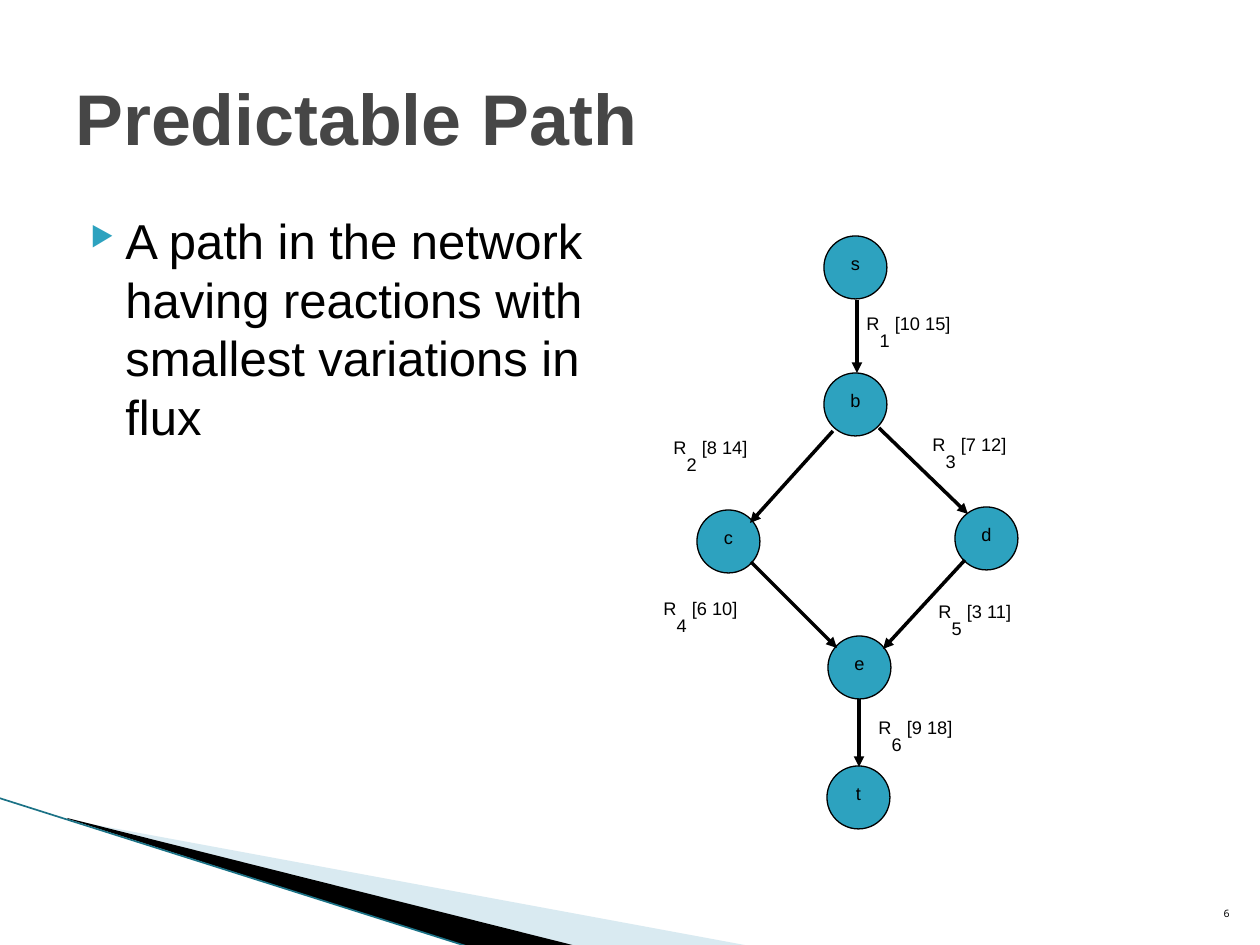
import pptx
import pptx.util
import pptx.dml.color
import pptx.enum.shapes
import pptx.enum.text
import pptx.oxml.ns
from lxml import etree

# Content, lengths in px
TITLE = "Predictable Path"
POINT = "A path in the network having reactions with smallest variations in flux"
NUMBER = "6"
NODE_SIZE = 63
NODES = [("s", 824, 236), ("b", 824, 373), ("c", 697, 510),
         ("d", 955, 507), ("e", 828, 636), ("t", 827, 766)]
# reaction index, flux range, label left and top, arrow start and end
REACTIONS = [
    ("1", "[10 15]", (854, 302), (857, 300), (857, 373)),
    ("2", "[8 14]", (661, 426), (833, 431), (750, 523)),
    ("3", "[7 12]", (920, 423), (879, 428), (968, 514)),
    ("4", "[6 10]", (651, 587), (751, 562), (837, 648)),
    ("5", "[3 11]", (926, 590), (965, 560), (883, 649)),
    ("6", "[9 18]", (866, 706), (859, 699), (859, 767)),
]
# corner wedges: colour name, opacity in percent, outline
WEDGES = [
    ("pale", 40, [(69, 820), (750, 946), (575, 946), (69, 819)]),
    ("black", 100, [(67, 818), (576, 946), (469, 947), (68, 819)]),
]
THEME = {
    "font": "Arial", "number_font": "Noto Sans Mono",
    "title": 41, "body": 28, "label": 18, "number": 10,
    "black": "000000", "grey": "464646", "teal": "2DA2BF",
    "pale": "A0CBDC", "edge": "1B7286",
}
RAISED, LOWERED = 30, -25
PX = pptx.util.Inches(1) // 126
qn = pptx.oxml.ns.qn
ALIGN = pptx.enum.text.PP_ALIGN
ANCHOR = pptx.enum.text.MSO_ANCHOR


def px(*values):
    return [round(value * PX) for value in values]


def color(name):
    return pptx.dml.color.RGBColor.from_string(THEME[name])


def add_span(para, text, size, tint="black", font="font", bold=False, baseline=None):
    span = para.add_run()
    span.text = text
    span.font.name = THEME[font]
    span.font.size = pptx.util.Pt(THEME[size])
    span.font.bold = bold
    span.font.color.rgb = color(tint)
    if baseline is not None:
        span.font._element.set("baseline", str(baseline * 1000))


def add_box(page, left, top, width, height, wrap=True, anchor=ANCHOR.TOP):
    box = page.shapes.add_textbox(*px(left, top, width, height))
    box.text_frame.word_wrap = wrap
    box.text_frame.vertical_anchor = anchor
    return box.text_frame


def add_line(page, start, end, tint, width, arrow=False):
    line = page.shapes.add_connector(
        pptx.enum.shapes.MSO_CONNECTOR.STRAIGHT, *px(*start, *end))
    line.line.color.rgb = color(tint)
    line.line.width = pptx.util.Pt(width)
    if arrow:
        etree.SubElement(line.line._get_or_add_ln(), qn("a:tailEnd"), type="triangle")
    etree.SubElement(line._element.spPr, qn("a:effectLst"))


def add_wedge(page, tint, opacity, points):
    builder = page.shapes.build_freeform(*points[0], scale=PX)
    builder.add_line_segments(points[1:])
    wedge = builder.convert_to_shape()
    wedge.shadow.inherit = False
    wedge.fill.solid()
    wedge.fill.fore_color.rgb = color(tint)
    wedge.line.fill.background()
    if opacity < 100:
        fill = wedge._element.spPr.find(qn("a:solidFill"))
        etree.SubElement(fill[0], qn("a:alpha"), val=str(opacity * 1000))


def add_node(page, name, left, top):
    node = page.shapes.add_shape(pptx.enum.shapes.MSO_SHAPE.OVAL,
                                 *px(left, top, NODE_SIZE, NODE_SIZE))
    node.shadow.inherit = False
    node.fill.solid()
    node.fill.fore_color.rgb = color("teal")
    node.line.color.rgb = color("black")
    node.line.width = pptx.util.Pt(0.75)
    node.text_frame.word_wrap = False
    node.text_frame.vertical_anchor = ANCHOR.MIDDLE
    para = node.text_frame.paragraphs[0]
    para.alignment = ALIGN.CENTER
    add_span(para, name, "label", baseline=RAISED)


def add_bullet(para):
    props = para._element.get_or_add_pPr()
    props.set("marL", str(px(50)[0]))
    props.set("indent", str(px(-35)[0]))
    tint = etree.SubElement(props, qn("a:buClr"))
    etree.SubElement(tint, qn("a:srgbClr"), val=THEME["teal"])
    etree.SubElement(props, qn("a:buSzPct"), val="55000")
    etree.SubElement(props, qn("a:buChar"), char="▶")


deck = pptx.Presentation()
deck.slide_width, deck.slide_height = px(1260, 945)
page = deck.slides.add_slide(deck.slide_layouts[6])

# Corner decoration
for wedge in WEDGES:
    add_wedge(page, *wedge)
add_line(page, (-1, 798), (469, 947), "edge", 0.95)

# Title, bullet and page number
title = add_box(page, 63, 38, 1134, 158, anchor=ANCHOR.MIDDLE)
add_span(title.paragraphs[0], TITLE, "title", "grey", bold=True)
body = add_box(page, 63, 204, 557, 624)
point = body.paragraphs[0]
add_bullet(point)
add_span(point, POINT, "body")
number = add_box(page, 1192, 883, 50, 50, anchor=ANCHOR.BOTTOM)
number.paragraphs[0].alignment = ALIGN.RIGHT
add_span(number.paragraphs[0], NUMBER, "number", font="number_font", baseline=RAISED)

# Reaction network
for node in NODES:
    add_node(page, *node)
for index, flux, corner, start, end in REACTIONS:
    add_line(page, start, end, "black", 2, arrow=True)
    label = add_box(page, *corner, 145, 50, wrap=False)
    label.auto_size = pptx.enum.text.MSO_AUTO_SIZE.SHAPE_TO_FIT_TEXT
    for text, baseline in (("R", RAISED), (index + " ", LOWERED), (flux, RAISED)):
        add_span(label.paragraphs[0], text, "label", baseline=baseline)

deck.save("out.pptx")
